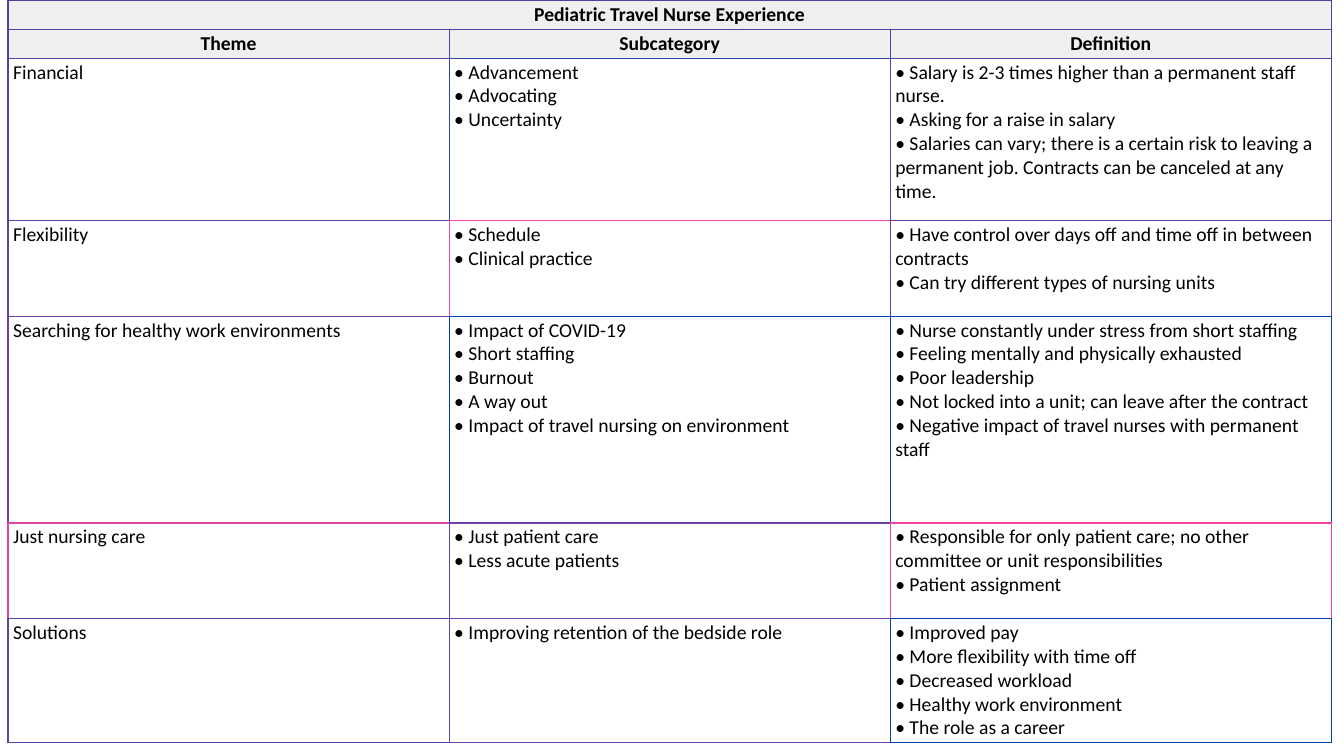
import dataclasses

import pptx
import pptx.dml.color
import pptx.enum.text
import pptx.util
from lxml import etree

GRID = pptx.util.Inches(0.01)
SLIDE_COLUMNS, SLIDE_ROWS = 1333, 750
TABLE_LEFT, TABLE_TOP = 8, 0
COLUMN_WIDTH = 437.5
ROW_HEIGHTS = [29, 29, 161, 95, 205, 95, 117]
MARGIN_SIDE, MARGIN_END = 5, 2


@dataclasses.dataclass(frozen=True)
class Theme:
    font: str = "Calibri"
    size: int = 14
    text: str = "000000"
    header_fill: str = "EFEFEF"
    body_fill: str = "FFFFFF"
    border_width: int = 1


THEME = Theme()

TITLE = "Pediatric Travel Nurse Experience"
HEADINGS = ["Theme", "Subcategory", "Definition"]
THEMES = [
    ("Financial",
     ["Advancement", "Advocating", "Uncertainty"],
     ["Salary is 2-3 times higher than a permanent staff nurse.",
      "Asking for a raise in salary",
      "Salaries can vary; there is a certain risk to leaving a permanent job. "
      "Contracts can be canceled at any time."]),
    ("Flexibility",
     ["Schedule", "Clinical practice"],
     ["Have control over days off and time off in between contracts",
      "Can try different types of nursing units"]),
    ("Searching for healthy work environments",
     ["Impact of COVID-19", "Short staffing", "Burnout", "A way out",
      "Impact of travel nursing on environment"],
     ["Nurse constantly under stress from short staffing",
      "Feeling mentally and physically exhausted",
      "Poor leadership",
      "Not locked into a unit; can leave after the contract",
      "Negative impact of travel nurses with permanent staff"]),
    ("Just nursing care",
     ["Just patient care", "Less acute patients"],
     ["Responsible for only patient care; no other committee or unit responsibilities",
      "Patient assignment"]),
    ("Solutions",
     ["Improving retention of the bedside role"],
     ["Improved pay", "More flexibility with time off", "Decreased workload",
      "Healthy work environment", "The role as a career"]),
]
BORDER_COLORS = [
    ["5040A5", "5040A5", "5040A5"],
    ["5040A5", "5040A5", "5040A5"],
    ["5043A5", "3045A5", "4845A5"],
    ["5844A5", "F045A5", "5043A5"],
    ["6843A5", "0045A5", "0045A5"],
    ["E043A5", "6843A5", "F045A5"],
    ["5844A5", "6843A5", "0045A5"],
]


def grid(count):
    return pptx.util.Emu(int(count * GRID))


def rgb(color):
    return pptx.dml.color.RGBColor.from_string(color)


def set_borders(cell, row, column):
    own = BORDER_COLORS[row][column]
    right = BORDER_COLORS[row][min(column + 1, len(HEADINGS) - 1)]
    below = BORDER_COLORS[min(row + 1, len(BORDER_COLORS) - 1)][column]
    properties = cell._tc.get_or_add_tcPr()
    namespace = pptx.oxml.ns.qn
    for side, color in (("L", own), ("R", right), ("T", own), ("B", below)):
        line = etree.SubElement(properties, namespace(f"a:ln{side}"),
                                w=str(pptx.util.Pt(THEME.border_width)))
        fill = etree.SubElement(line, namespace("a:solidFill"))
        etree.SubElement(fill, namespace("a:srgbClr"), val=color)


def style_cell(cell, row, column, fill):
    set_borders(cell, row, column)
    cell.fill.solid()
    cell.fill.fore_color.rgb = rgb(fill)
    cell.margin_left = cell.margin_right = grid(MARGIN_SIDE)
    cell.margin_top = cell.margin_bottom = grid(MARGIN_END)


def write_lines(cell, lines, bold=False):
    paragraph = cell.text_frame.paragraphs[0]
    for index, line in enumerate(lines):
        if index:
            paragraph.add_line_break()
        run = paragraph.add_run()
        run.text = line
        run.font.name = THEME.font
        run.font.size = pptx.util.Pt(THEME.size)
        run.font.bold = bold
        run.font.color.rgb = rgb(THEME.text)
    return paragraph


def write_header(cell, text):
    cell.vertical_anchor = pptx.enum.text.MSO_ANCHOR.MIDDLE
    paragraph = write_lines(cell, [text], bold=True)
    paragraph.alignment = pptx.enum.text.PP_ALIGN.CENTER


def add_theme_table(slide):
    column_count = len(HEADINGS)
    frame = slide.shapes.add_table(
        len(ROW_HEIGHTS), column_count, grid(TABLE_LEFT), grid(TABLE_TOP),
        grid(COLUMN_WIDTH * column_count), grid(sum(ROW_HEIGHTS)))
    table = frame.table
    table.first_row = table.horz_banding = False
    for column in table.columns:
        column.width = grid(COLUMN_WIDTH)
    for row, height in enumerate(ROW_HEIGHTS):
        table.rows[row].height = grid(height)
        fill = THEME.header_fill if row < 2 else THEME.body_fill
        for column in range(column_count):
            style_cell(table.cell(row, column), row, column, fill)

    table.cell(0, 0).merge(table.cell(0, column_count - 1))
    write_header(table.cell(0, 0), TITLE)
    for column, heading in enumerate(HEADINGS):
        write_header(table.cell(1, column), heading)
    for row, (name, subcategories, definitions) in enumerate(THEMES, start=2):
        write_lines(table.cell(row, 0), [name])
        for column, items in enumerate((subcategories, definitions), start=1):
            write_lines(table.cell(row, column), [f"• {item}" for item in items])


def main():
    presentation = pptx.Presentation()
    presentation.slide_width = grid(SLIDE_COLUMNS)
    presentation.slide_height = grid(SLIDE_ROWS)
    slide = presentation.slides.add_slide(presentation.slide_layouts[6])
    add_theme_table(slide)
    presentation.save("out.pptx")


if __name__ == "__main__":
    main()
